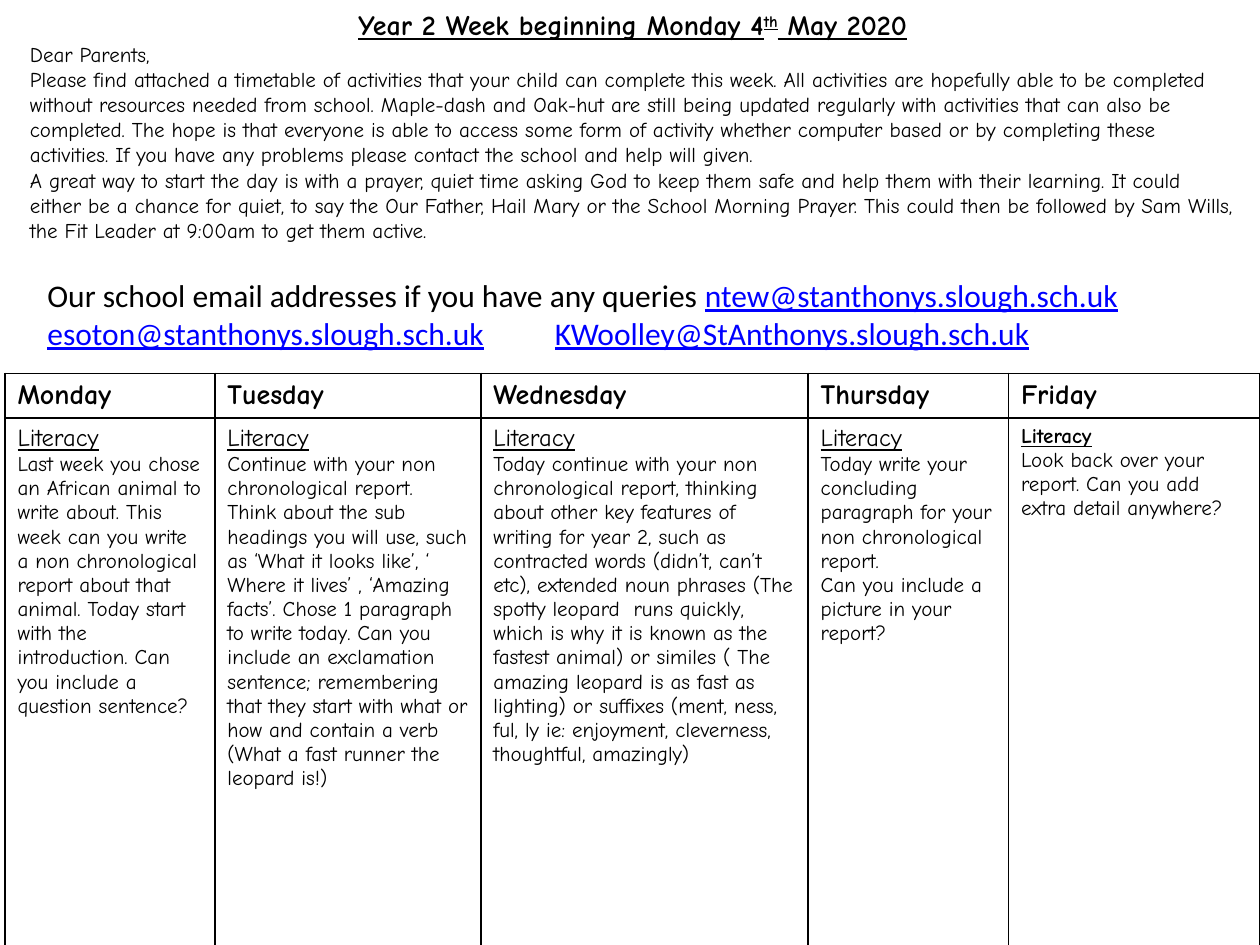
from dataclasses import dataclass

from lxml import etree
from pptx import Presentation
from pptx.dml.color import RGBColor
from pptx.enum.text import MSO_AUTO_SIZE, PP_ALIGN
from pptx.oxml.ns import qn
from pptx.util import Pt

CENTER = PP_ALIGN.CENTER
LEFT = PP_ALIGN.LEFT
GROW = MSO_AUTO_SIZE.SHAPE_TO_FIT_TEXT

COLORS = {"text": "000000", "link": "0000FF", "paper": "FFFFFF", "border": "000000"}
COMIC = "Comic Neue"
BODY = {"name": COMIC, "size": Pt(12), "bold": False, "underline": False}
HEADER = BODY | {"size": Pt(16), "bold": True}
TITLE = HEADER | {"underline": True}
SUBJECT = BODY | {"size": Pt(14), "underline": True}
BOLD_SUBJECT = BODY | {"bold": True, "underline": True}
EMAIL = {"name": "Calibri", "size": Pt(18), "underline": False}
LINK = EMAIL | {"underline": True}


@dataclass
class Run:
    text: str
    font: dict
    color: str = "text"
    baseline: int = 0


@dataclass
class Para:
    runs: list[Run]
    align: PP_ALIGN = LEFT
    tab: int = 0


@dataclass
class Box:
    left: float
    top: float
    width: float
    height: float
    paras: list[Para]


@dataclass
class Day:
    name: str
    width: float
    tasks: list[str]
    subject: dict


def body_para(text: str) -> Para:
    return Para([Run(text, BODY)])


DAYS = [
    Day("Monday", 120, [
        "Last week you chose an African animal to write about. This week can you write a non "
        "chronological report about that animal. Today start with the introduction. Can you "
        "include a question sentence?"], SUBJECT),
    Day("Tuesday", 152, [
        "Continue with your non chronological report. Think about the sub headings you will use, "
        "such as ‘What it looks like’, ‘ Where it lives’ , ‘Amazing facts’. Chose 1 paragraph to "
        "write today. Can you include an exclamation sentence; remembering that they start with "
        "what or how and contain a verb (What a fast runner the leopard is!)"], SUBJECT),
    Day("Wednesday", 187, [
        "Today continue with your non chronological report, thinking about other key features of "
        "writing for year 2, such as contracted words (didn’t, can’t etc), extended noun phrases "
        "(The spotty leopard  runs quickly, which is why it is known as the fastest animal) or "
        "similes ( The amazing leopard is as fast as lighting) or suffixes (ment, ness, ful, ly "
        "ie: enjoyment, cleverness, thoughtful, amazingly)"], SUBJECT),
    Day("Thursday", 114.5, [
        "Today write your concluding paragraph for your non chronological report.",
        "Can you include a picture in your report?"], SUBJECT),
    Day("Friday", 143.5, [
        "Look back over your report. Can you add extra detail anywhere?"], BOLD_SUBJECT),
]
ROW_HEIGHTS = [23, 302.5]

LETTER = Box(10, 0.7, 703, 145.5, [
    Para([Run("Year 2 Week beginning Monday 4", TITLE),
          Run("th", TITLE, baseline=30000),
          Run(" May 2020", TITLE)], CENTER),
    body_para("Dear Parents,"),
    body_para(
        "Please find attached a timetable of activities that your child can complete this week. "
        "All activities are hopefully able to be completed without resources needed from school. "
        "Maple-dash and Oak-hut are still being updated regularly with activities that can also "
        "be completed. The hope is that everyone is able to access some form of activity whether "
        "computer based or by completing these activities. If you have any problems please "
        "contact the school and help will given."),
    body_para(
        "A great way to start the day is with a prayer, quiet time asking God to keep them safe "
        "and help them with their learning. It could either be a chance for quiet, to say the Our "
        "Father, Hail Mary or the School Morning Prayer. This could then be followed by Sam "
        "Wills, the Fit Leader at 9:00am to get them active."),
])
CONTACTS = Box(20, 154, 655, 51, [
    Para([Run("Our school email addresses if you have any queries ", EMAIL),
          Run("ntew@stanthonys.slough.sch.uk", LINK, "link")]),
    Para([Run("esoton@stanthonys.slough.sch.uk", LINK, "link"),
          Run("\t", EMAIL),
          Run("KWoolley@StAnthonys.slough.sch.uk", LINK, "link")], tab=290),
])


def rgb(key: str) -> RGBColor:
    return RGBColor.from_string(COLORS[key])


def write(tf, paras: list[Para]) -> None:
    for i, para in enumerate(paras):
        p = tf.add_paragraph() if i else tf.paragraphs[0]
        p.alignment = para.align
        if para.tab:
            tabs = etree.SubElement(p._p.get_or_add_pPr(), qn("a:tabLst"))
            etree.SubElement(tabs, qn("a:tab"), pos=str(Pt(para.tab)), algn="l")
        for run in para.runs:
            r = p.add_run()
            r.text = run.text
            for key, value in run.font.items():
                setattr(r.font, key, value)
            r.font.color.rgb = rgb(run.color)
            if run.baseline:
                r._r.get_or_add_rPr().set("baseline", str(run.baseline))


def add_box(s, box: Box) -> None:
    sp = s.shapes.add_textbox(Pt(box.left), Pt(box.top), Pt(box.width), Pt(box.height))
    tf = sp.text_frame
    tf.word_wrap = True
    tf.auto_size = GROW
    write(tf, box.paras)


def fill_cell(cell, paras: list[Para]) -> None:
    write(cell.text_frame, paras)
    cell.fill.solid()
    cell.fill.fore_color.rgb = rgb("paper")
    tcPr = cell._tc.get_or_add_tcPr()
    for i, side in enumerate(("lnL", "lnR", "lnT", "lnB")):
        ln = etree.Element(qn(f"a:{side}"), w=str(Pt(1)))
        fill = etree.SubElement(ln, qn("a:solidFill"))
        etree.SubElement(fill, qn("a:srgbClr"), val=COLORS["border"])
        tcPr.insert(i, ln)


def add_timetable(s, days: list[Day]) -> None:
    frame = s.shapes.add_table(len(ROW_HEIGHTS), len(days), Pt(2.8), Pt(213.4),
                               Pt(sum(day.width for day in days)), Pt(sum(ROW_HEIGHTS)))
    table = frame.table
    table.first_row = table.horz_banding = False
    for row, height in zip(table.rows, ROW_HEIGHTS):
        row.height = Pt(height)
    for col, day in enumerate(days):
        table.columns[col].width = Pt(day.width)
        fill_cell(table.cell(0, col), [Para([Run(day.name, HEADER)])])
        fill_cell(table.cell(1, col), [Para([Run("Literacy", day.subject)]),
                                       *map(body_para, day.tasks)])


def main() -> None:
    prs = Presentation()
    prs.slide_width, prs.slide_height = Pt(720), Pt(540)
    s = prs.slides.add_slide(prs.slide_layouts[6])
    add_timetable(s, DAYS)
    add_box(s, LETTER)
    add_box(s, CONTACTS)
    prs.save("out.pptx")


if __name__ == "__main__":
    main()
